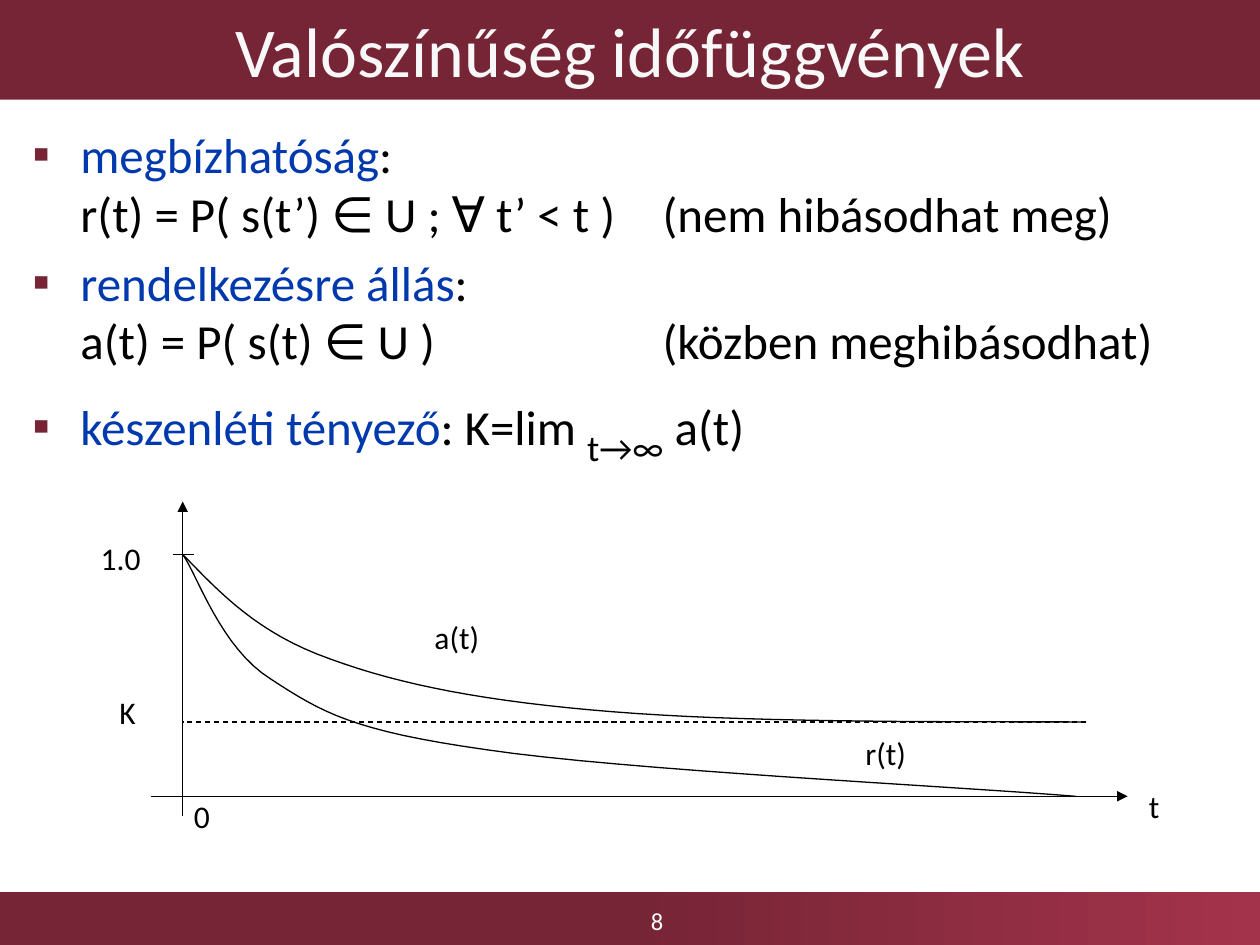
from dataclasses import dataclass

from lxml import etree
from pptx import Presentation
from pptx.dml.color import RGBColor
from pptx.enum.dml import MSO_LINE
from pptx.enum.shapes import MSO_CONNECTOR, MSO_SHAPE
from pptx.enum.text import MSO_ANCHOR, PP_ALIGN
from pptx.oxml.ns import qn
from pptx.util import Inches, Pt

RECT = MSO_SHAPE.RECTANGLE
STRAIGHT = MSO_CONNECTOR.STRAIGHT
DASH = MSO_LINE.DASH
MIDDLE = MSO_ANCHOR.MIDDLE
CENTER = PP_ALIGN.CENTER


@dataclass(frozen=True)
class Theme:
    font: str = "Calibri"
    maroon: str = "762536"
    crimson: str = "A3334B"
    blue: str = "0038AE"
    black: str = "000000"
    white: str = "FFFFFF"
    title_text: str = "F8F8F8"
    title: int = 40
    limit: int = 36
    body: int = 28
    label: int = 18
    number: int = 14
    line: float = 0.75


T = Theme()
TAB = "\t"
BULLETS = [
    ("megbízhatóság", [":", None, f"r(t) = P( s(t’) ∈ U ; ∀ t’ < t ){TAB}(nem hibásodhat meg)"]),
    ("rendelkezésre állás", [":", None, f"a(t) = P( s(t) ∈ U ){TAB * 2}(közben meghibásodhat)"]),
    ("készenléti tényező", [": K=lim ", ("t→∞",), " a(t)"]),
]
TAB_STOPS = (4, 5)


def rgb(value):
    return RGBColor.from_string(value)


def add_run(p, text, size, color):
    r = p.add_run()
    r.text = text
    r.font.name = T.font
    r.font.size = Pt(size)
    r.font.color.rgb = rgb(color)
    return r


def add_band(s, box):
    sp = s.shapes.add_shape(RECT, *map(Inches, box))
    sp.shadow.inherit = False
    sp.line.fill.background()
    return sp


def add_centered(sp, text, size, color):
    tf = sp.text_frame
    tf.word_wrap = True
    tf.vertical_anchor = MIDDLE
    p = tf.paragraphs[0]
    p.alignment = CENTER
    add_run(p, text, size, color)


def add_title(s, box, text):
    sp = add_band(s, box)
    sp.fill.solid()
    sp.fill.fore_color.rgb = rgb(T.maroon)
    add_centered(sp, text, T.title, T.title_text)


def add_footer(s, box, number):
    x, y, w, h = box
    sp = add_band(s, box)
    sp.fill.gradient()
    sp.fill.gradient_angle = 0
    stops = zip(sp.fill.gradient_stops, (0.5, 1), (T.maroon, T.crimson))
    for stop, position, color in stops:
        stop.position = position
        stop.color.rgb = rgb(color)
    tb = s.shapes.add_textbox(*map(Inches, (x + 3.59, y + 0.03, 3.25, h - 0.03)))
    add_centered(tb, number, T.number, T.white)


def format_bullet(p):
    pPr = p._p.get_or_add_pPr()
    pPr.set("marL", str(Inches(0.38)))
    pPr.set("indent", str(-Inches(0.38)))
    color = etree.SubElement(pPr, qn("a:buClr"))
    etree.SubElement(color, qn("a:srgbClr"), val=T.maroon)
    etree.SubElement(pPr, qn("a:buFont"), typeface=T.font)
    etree.SubElement(pPr, qn("a:buChar"), char="▪")
    tabs = etree.SubElement(pPr, qn("a:tabLst"))
    for stop in TAB_STOPS:
        etree.SubElement(tabs, qn("a:tab"), pos=str(Inches(stop)), algn="l")


def add_body(s, box, bullets):
    tf = s.shapes.add_textbox(*map(Inches, box)).text_frame
    tf.word_wrap = True
    for i, (term, parts) in enumerate(bullets):
        p = tf.paragraphs[0] if i == 0 else tf.add_paragraph()
        format_bullet(p)
        add_run(p, term, T.body, T.blue)
        for part in parts:
            if part is None:
                p.add_line_break()
            elif isinstance(part, tuple):
                r = add_run(p, part[0], T.limit, T.black)
                r.font._element.set("baseline", "-25000")
            else:
                add_run(p, part, T.body, T.black)
        if i:
            p.space_before = Pt(0.2 * max(r.font.size.pt for r in p.runs))


def add_line(s, x1, y1, x2, y2, arrow=False, dash=None):
    c = s.shapes.add_connector(STRAIGHT, *map(Inches, (x1, y1, x2, y2)))
    c.line.color.rgb = rgb(T.black)
    c.line.width = Pt(T.line)
    if dash:
        c.line.dash_style = dash
    if arrow:
        etree.SubElement(c.line._get_or_add_ln(), qn("a:tailEnd"), type="triangle")
    etree.SubElement(c._element.spPr, qn("a:effectLst"))


def bezier(p0, p1, p2, p3, steps=16):
    for i in range(1, steps + 1):
        t = i / steps
        u = 1 - t
        yield tuple(
            u**3 * a + 3 * u * u * t * b + 3 * u * t * t * c + t**3 * d
            for a, b, c, d in zip(p0, p1, p2, p3)
        )


def add_curve(s, x, y, knots):
    pts = [(Inches(x + dx), Inches(y + dy)) for dx, dy in knots]
    builder = s.shapes.build_freeform(*pts[0])
    for i in range(0, len(pts) - 1, 3):
        builder.add_line_segments(bezier(*pts[i:i + 4]), close=False)
    sp = builder.convert_to_shape()
    sp.shadow.inherit = False
    sp.fill.background()
    sp.line.color.rgb = rgb(T.black)
    sp.line.width = Pt(T.line)


def add_label(s, x, y, w, text):
    tf = s.shapes.add_textbox(*map(Inches, (x, y, w, 0.5))).text_frame
    tf.word_wrap = False
    add_run(tf.paragraphs[0], text, T.label, T.black)


def add_plot(s, box):
    x, y, w, h = box
    axis_x, axis_y = x + 0.25, y + h - 0.16
    one_y, k_y = y + 0.42, y + 1.75
    add_line(s, axis_x, y + h, axis_x, y, arrow=True)
    add_line(s, x, axis_y, x + w, axis_y, arrow=True)
    add_line(s, axis_x - 0.08, one_y, axis_x + 0.09, one_y)
    add_line(s, axis_x + 7.17, k_y, axis_x, k_y, dash=DASH)
    reliability = [(0, 0), (0.12, 0.17), (0.3, 0.74), (0.7, 0.99), (1.1, 1.25),
                   (1.34, 1.4), (2.41, 1.55), (3.47, 1.71), (6.11, 1.84), (7.09, 1.92)]
    availability = [(0, 0), (0.3, 0.31), (0.6, 0.63), (1.17, 0.83), (1.74, 1.04),
                    (2.42, 1.17), (3.42, 1.25), (4.42, 1.33), (5.79, 1.33), (7.17, 1.33)]
    for knots in (reliability, availability):
        add_curve(s, axis_x, one_y, knots)
    labels = [("t", 7.82, 2.22, 0.29), ("K", -0.35, 1.47, 0.44),
              ("a(t)", 2.15, 0.88, 0.66), ("r(t)", 5.57, 1.8, 0.63),
              ("1.0", -0.5, 0.25, 0.62), ("0", 0.24, 2.3, 0.37)]
    for text, dx, dy, width in labels:
        add_label(s, x + dx, y + dy, width, text)


def main():
    prs = Presentation()
    prs.slide_width, prs.slide_height = Inches(10), Inches(7.5)
    s = prs.slides.add_slide(prs.slide_layouts[6])
    add_footer(s, (0, 7.08, 10, 0.42), "8")
    add_title(s, (0, 0, 10, 0.79), "Valószínűség időfüggvények")
    add_body(s, (0.16, 0.94, 9.69, 6.05), BULLETS)
    add_plot(s, (1.2, 3.98, 7.75, 2.5))
    prs.save("out.pptx")


if __name__ == "__main__":
    main()
